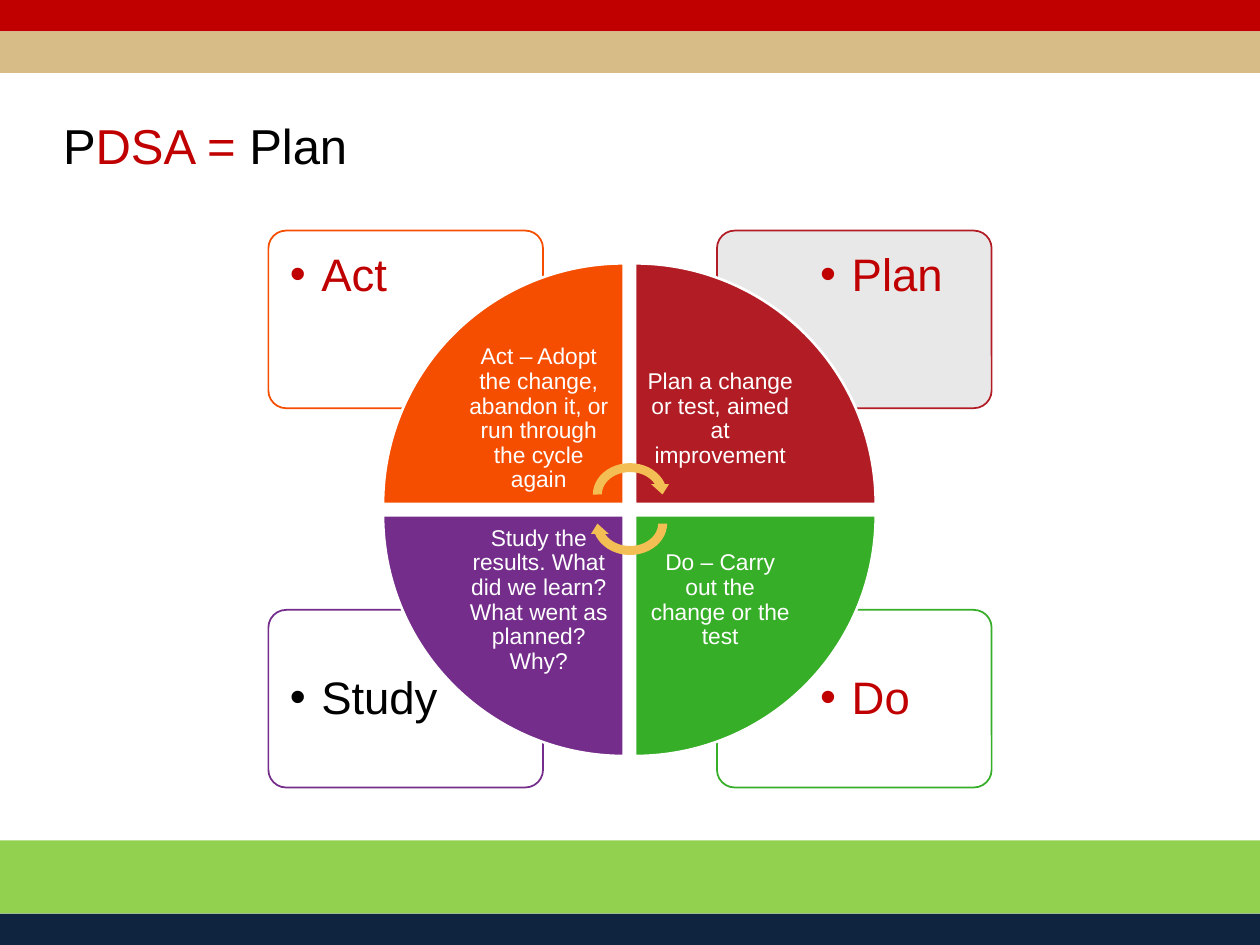
"""Build the PDSA cycle slide."""
from dataclasses import dataclass

from lxml.etree import SubElement
from pptx import Presentation
from pptx.dml.color import RGBColor
from pptx.enum.shapes import MSO_SHAPE
from pptx.enum.text import MSO_ANCHOR, MSO_AUTO_SIZE, PP_ALIGN
from pptx.oxml.ns import qn
from pptx.util import Emu, Pt

EMU_PER_PX = 9144


@dataclass(frozen=True)
class Theme:
    font: str = "Arial"
    title_size: int = 28
    label_size: int = 26
    wedge_size: int = 13
    line_spacing: float = 0.9
    black: str = "000000"
    white: str = "FFFFFF"
    grey: str = "E7E6E6"
    red: str = "C00000"
    tan: str = "D7BC87"
    lime: str = "92D050"
    navy: str = "0F243E"
    orange: str = "F54E00"
    crimson: str = "B21D25"
    green: str = "37AE28"
    purple: str = "742D8A"
    gold: str = "F3BE54"


def px(length):
    return Emu(length * EMU_PER_PX)


class SlideBuilder:
    def __init__(self, slide, theme):
        self.slide = slide
        self.theme = theme

    def style_font(self, font, size, color):
        font.name = self.theme.font
        font.size = Pt(size)
        font.color.rgb = RGBColor.from_string(color)

    def set_margins(self, text_frame, horizontal, vertical):
        text_frame.margin_left = text_frame.margin_right = px(horizontal)
        text_frame.margin_top = text_frame.margin_bottom = px(vertical)

    def title(self, box, pieces):
        title = self.slide.shapes.title
        title.left, title.top, title.width, title.height = map(px, box)
        text_frame = title.text_frame
        text_frame.auto_size = MSO_AUTO_SIZE.NONE
        text_frame.vertical_anchor = MSO_ANCHOR.TOP
        self.set_margins(text_frame, 0, 5)
        paragraph = text_frame.paragraphs[0]
        paragraph.alignment = PP_ALIGN.LEFT
        paragraph.line_spacing = self.theme.line_spacing
        for text, color in pieces:
            run = paragraph.add_run()
            run.text = text
            self.style_font(run.font, self.theme.title_size, color)

    def shape(self, kind, box, fill=None, line=None, line_width=1, rotation=0):
        shape = self.slide.shapes.add_shape(kind, *map(px, box))
        shape.shadow.inherit = False
        shape.rotation = rotation
        if fill:
            shape.fill.solid()
            shape.fill.fore_color.rgb = RGBColor.from_string(fill)
        else:
            shape.fill.background()
        if line:
            shape.line.color.rgb = RGBColor.from_string(line)
            shape.line.width = Pt(line_width)
        else:
            shape.line.fill.background()
        return shape

    def card(self, box, fill, line):
        card = self.shape(MSO_SHAPE.ROUNDED_RECTANGLE, box, fill, line)
        card.adjustments[0] = 0.1
        if fill:
            color = card.element.spPr.find(qn("a:solidFill")).find(qn("a:srgbClr"))
            SubElement(color, qn("a:alpha"), val="90000")

    def text(self, box, text, margin, size, color):
        text_box = self.slide.shapes.add_textbox(*map(px, box))
        text_frame = text_box.text_frame
        text_frame.word_wrap = True
        self.set_margins(text_frame, margin, margin)
        text_frame.text = text
        paragraph = text_frame.paragraphs[0]
        paragraph.line_spacing = self.theme.line_spacing
        self.style_font(paragraph.runs[0].font, size, color)
        return text_frame

    def bullet_label(self, box, text, color):
        text_frame = self.text(box, text, 14, self.theme.label_size, color)
        properties = text_frame.paragraphs[0]._p.get_or_add_pPr()
        properties.set("marL", str(px(25)))
        properties.set("indent", str(px(-25)))
        SubElement(properties, qn("a:buFont"), typeface=self.theme.font)
        SubElement(properties, qn("a:buChar"), char="•")

    def wedge_text(self, box, text):
        text_frame = self.text(box, text, 10, self.theme.wedge_size, self.theme.white)
        text_frame.vertical_anchor = MSO_ANCHOR.MIDDLE
        text_frame.paragraphs[0].alignment = PP_ALIGN.CENTER


def main():
    theme = Theme()
    presentation = Presentation()
    presentation.slide_width, presentation.slide_height = px(1000), px(750)
    slide = presentation.slides.add_slide(presentation.slide_layouts[5])
    builder = SlideBuilder(slide, theme)

    bands = [
        (725, 25, theme.navy),
        (667, 58, theme.lime),
        (0, 25, theme.red),
        (25, 33, theme.tan),
    ]
    for top, height, color in bands:
        builder.shape(MSO_SHAPE.RECTANGLE, (0, top, 1000, height), color)

    builder.title(
        (50, 92, 862, 109),
        [("P", theme.black), ("DSA = ", theme.red), ("Plan", theme.black)],
    )

    quadrants = [
        (0, 0, "Act", theme.red, theme.white, theme.orange,
         "Act – Adopt the change, abandon it, or run through the cycle again"),
        (1, 0, "Plan", theme.red, theme.grey, theme.crimson,
         "Plan a change or test, aimed at improvement"),
        (1, 1, "Do", theme.red, theme.white, theme.green,
         "Do – Carry out the change or the test"),
        (0, 1, "Study", theme.black, None, theme.purple,
         "Study the results. What did we learn? What went as planned? Why?"),
    ]
    for column, row, label, label_color, fill, color, _ in quadrants:
        builder.card((213 + 356 * column, 183 + 301 * row, 218, 141), fill, color)
        builder.bullet_label(
            (216 + 421 * column, 186 + 336 * row, 147, 100), label, label_color
        )
    for turn, (column, row, _, _, _, color, description) in enumerate(quadrants):
        wedge_box = (304 + 200 * column, 209 + 200 * row, 191, 191)
        builder.shape(
            MSO_SHAPE.PIE_WEDGE, wedge_box, color, theme.white, 1.5, 90 * turn
        )
        builder.wedge_text(
            (360 + 144 * column, 265 + 144 * row, 135, 135), description
        )

    for top, rotation in [(364, 0), (387, 180)]:
        builder.shape(
            MSO_SHAPE.CIRCULAR_ARROW, (467, top, 66, 57), theme.gold, rotation=rotation
        )

    presentation.save("out.pptx")


if __name__ == "__main__":
    main()
